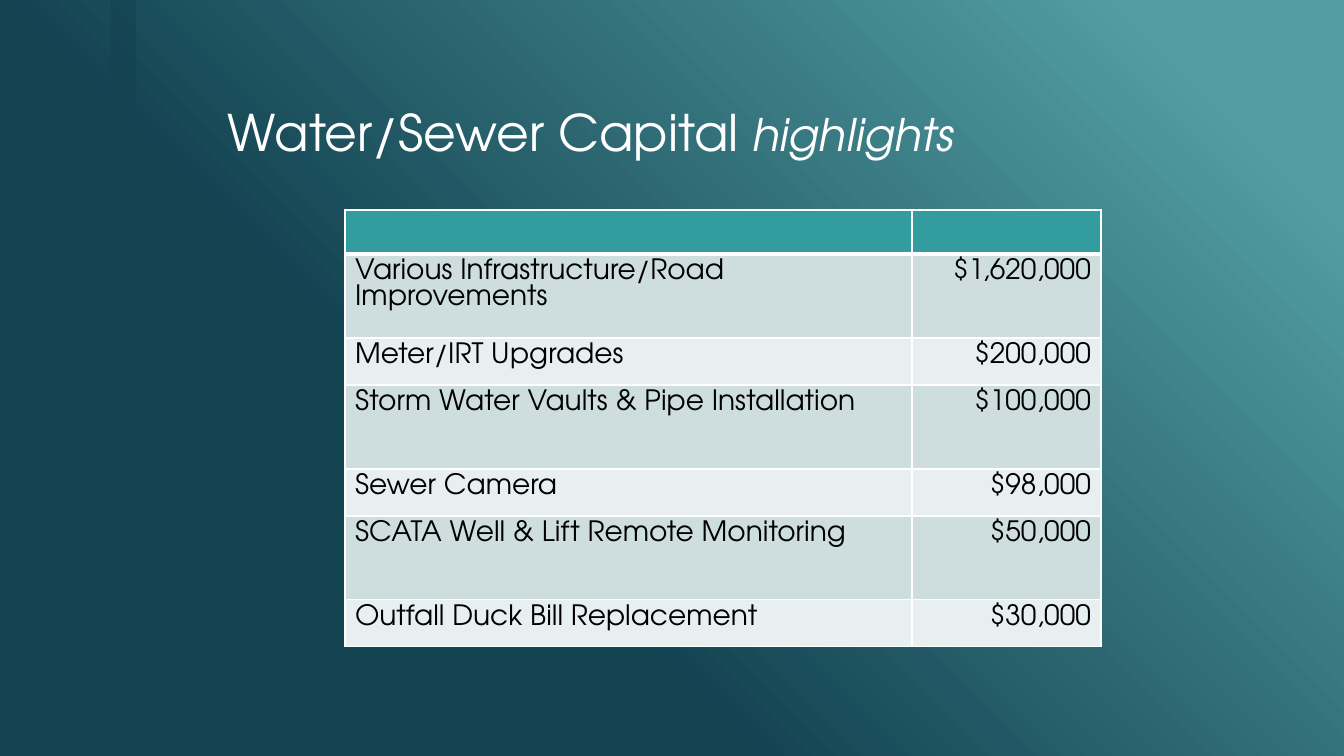
from lxml import etree
from pptx import Presentation
from pptx.dml.color import RGBColor
from pptx.enum.shapes import MSO_SHAPE as Shape
from pptx.enum.text import MSO_ANCHOR as Anchor, PP_ALIGN as Align
from pptx.oxml.ns import qn
from pptx.util import Pt

EMU_PER_PX = 914400 / 100.8
FONT = "TeX Gyre Adventor"
COLORS = {
    "white": "FFFFFF", "black": "000000", "glow": "529EA1", "deep": "134251",
    "header": "339C9F", "odd": "CEDEDF", "even": "E8EFF0",
}
PROJECTS = [
    ("Various Infrastructure/Road Improvements", "$1,620,000"),
    ("Meter/IRT Upgrades", "$200,000"),
    ("Storm Water Vaults & Pipe Installation", "$100,000"),
    ("Sewer Camera", "$98,000"),
    ("SCATA Well & Lift Remote Monitoring", "$50,000"),
    ("Outfall Duck Bill Replacement", "$30,000"),
]


def px(length):
    return round(length * EMU_PER_PX)


def color(name):
    return RGBColor.from_string(COLORS[name])


def add_text(para, text, size=20, fill="black", italic=False):
    span = para.add_run()
    span.text = text
    span.font.name = FONT
    span.font.size = Pt(size)
    span.font.italic = italic
    span.font.color.rgb = color(fill)


class SlideBuilder:
    def __init__(self, deck):
        self.page = deck.slides.add_slide(deck.slide_layouts[6])

    def background(self, stops, angle):
        fill = self.page.background.fill
        fill.gradient()
        fill.gradient_angle = angle
        for stop, (position, name) in zip(fill.gradient_stops, stops):
            stop.position = position
            stop.color.rgb = color(name)

    def band(self, left, top, width, height, fill, opacity):
        shape = self.page.shapes.add_shape(
            Shape.RECTANGLE, px(left), px(top), px(width), px(height))
        shape.shadow.inherit = False
        shape.line.fill.background()
        shape.fill.solid()
        shape.fill.fore_color.rgb = color(fill)
        tint = shape.fill._xPr.find(".//" + qn("a:srgbClr"))
        etree.SubElement(tint, qn("a:alpha"), val=str(opacity * 1000))

    def title(self, left, top, width, height, spans):
        box = self.page.shapes.add_textbox(px(left), px(top), px(width), px(height))
        frame = box.text_frame
        frame.word_wrap = True
        frame.vertical_anchor = Anchor.BOTTOM
        para = frame.paragraphs[0]
        para.line_spacing = 0.9
        for text, style in spans:
            add_text(para, text, fill="white", **style)

    def borders(self, cell, bottom):
        properties = cell._tc.get_or_add_tcPr()
        widths = {"lnL": 1, "lnR": 1, "lnT": 1, "lnB": bottom}
        for index, (side, width) in enumerate(widths.items()):
            line = etree.Element(qn("a:" + side), w=str(Pt(width)))
            fill = etree.SubElement(line, qn("a:solidFill"))
            etree.SubElement(fill, qn("a:srgbClr"), val=COLORS["white"])
            properties.insert(index, line)

    def table(self, left, top, widths, heights, rows):
        frame = self.page.shapes.add_table(
            len(heights), len(widths), px(left), px(top),
            px(sum(widths)), px(sum(heights)))
        table = frame.table
        for column, width in zip(table.columns, widths):
            column.width = px(width)
        for number, (row, height, texts) in enumerate(zip(table.rows, heights, rows)):
            row.height = px(height)
            name = "header" if number == 0 else "odd" if number % 2 else "even"
            for cell, text, align in zip(row.cells, texts, (Align.LEFT, Align.RIGHT)):
                cell.fill.solid()
                cell.fill.fore_color.rgb = color(name)
                # The header's lower rule also tops the first project row
                self.borders(cell, bottom=3 if number == 0 else 1)
                if text:
                    para = cell.text_frame.paragraphs[0]
                    para.alignment = align
                    add_text(para, text)


def main():
    deck = Presentation()
    deck.slide_width, deck.slide_height = px(1344), px(756)
    slide = SlideBuilder(deck)

    # Backdrop
    slide.background([(0.1, "glow"), (0.65, "deep")], angle=225)
    slide.band(111, 0, 25, 756, fill="deep", opacity=60)

    # Heading
    slide.title(218, 33, 1008, 134, [
        ("Water/Sewer Capital ", {"size": 36}),
        ("highlights", {"size": 32, "italic": True}),
    ])

    # Project costs: an empty header, then tall and short rows in turn
    slide.table(345, 210, widths=[567, 189], heights=[44] + [84, 47] * 3,
                rows=[("", "")] + PROJECTS)
    deck.save("out.pptx")


if __name__ == "__main__":
    main()
